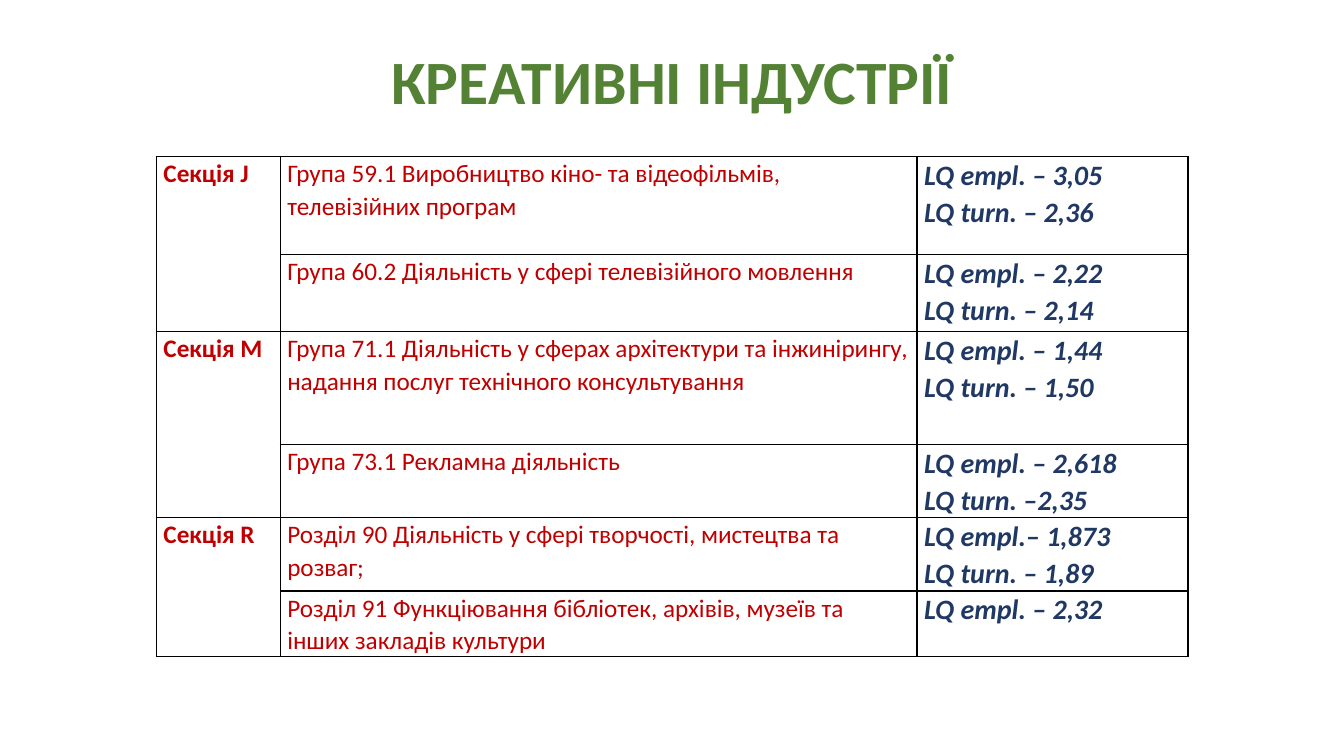
from lxml.etree import SubElement as Sub
from pptx import Presentation
from pptx.dml.color import RGBColor as Rgb
from pptx.enum.text import MSO_ANCHOR as Anchor, PP_ALIGN as Align
from pptx.oxml.ns import qn
from pptx.util import Cm, Pt

COLORS = {"title": "548235", "name": "C00000", "value": "203864", "line": "000000"}
WIDTHS = [3.12, 16.05, 6.83]
HEIGHTS = [2.48, 1.93, 2.85, 1.84, 1.85, 1.66]
SECTIONS = [
    ("Секція J", [
        ("Група 59.1 Виробництво кіно- та відеофільмів, телевізійних програм",
         ["LQ empl. – 3,05", "LQ turn. – 2,36"]),
        ("Група 60.2 Діяльність у сфері телевізійного мовлення",
         ["LQ empl. – 2,22", "LQ turn. – 2,14"]),
    ]),
    ("Cекція М", [
        ("Група 71.1 Діяльність у сферах архітектури та інжинірингу, "
         "надання послуг технічного консультування",
         ["LQ empl. – 1,44", "LQ turn. – 1,50"]),
        ("Група 73.1 Рекламна діяльність",
         ["LQ empl. – 2,618", "LQ turn. –2,35"]),
    ]),
    ("Секція R", [
        ("Розділ 90 Діяльність у сфері творчості, мистецтва та розваг;",
         ["LQ empl.– 1,873", "LQ turn. – 1,89"]),
        ("Розділ 91 Функціювання бібліотек, архівів, музеїв та інших закладів культури",
         ["LQ empl. – 2,32"]),
    ]),
]


def write(frame, lines, color, size=18, bold=False, italic=False,
          align=Align.LEFT, spacing=1.07):
    """Fill a text frame with one paragraph per line."""
    frame.word_wrap = True
    for i, line in enumerate(lines):
        para = frame.add_paragraph() if i else frame.paragraphs[0]
        para.alignment = align
        para.line_spacing = spacing
        run = para.add_run()
        run.text = line
        font = run.font
        font.name, font.size = "Calibri", Pt(size)
        font.bold, font.italic = bold, italic
        font.color.rgb = Rgb.from_string(COLORS[color])


def add_title(slide, text):
    box = slide.shapes.add_textbox(Cm(2.34), Cm(1.02), Cm(29.21), Cm(2.24))
    box.text_frame.vertical_anchor = Anchor.MIDDLE
    write(box.text_frame, [text], "title", size=44, bold=True,
          align=Align.CENTER, spacing=0.9)


def style(cell):
    """Give a cell its margins and border, and no fill."""
    cell.margin_left = cell.margin_right = Cm(0.18)
    cell.margin_top = cell.margin_bottom = 0
    props = cell._tc.get_or_add_tcPr()
    for side in ("lnL", "lnR", "lnT", "lnB"):
        line = Sub(props, qn("a:" + side), w=str(Pt(1)))
        fill = Sub(line, qn("a:solidFill"))
        Sub(fill, qn("a:srgbClr"), val=COLORS["line"])
    cell.fill.background()


def add_grid(slide):
    frame = slide.shapes.add_table(len(HEIGHTS), len(WIDTHS), Cm(3.94), Cm(3.94),
                                   Cm(sum(WIDTHS)), Cm(sum(HEIGHTS)))
    table = frame.table
    table.first_row = table.horz_banding = False
    for col, width in zip(table.columns, WIDTHS):
        col.width = Cm(width)
    for row, height in zip(table.rows, HEIGHTS):
        row.height = Cm(height)
    for cell in table.iter_cells():
        style(cell)
    top = 0
    for section, groups in SECTIONS:
        head = table.cell(top, 0)
        head.merge(table.cell(top + len(groups) - 1, 0))
        write(head.text_frame, [section], "name", bold=True)
        for row, (name, values) in enumerate(groups, top):
            write(table.cell(row, 1).text_frame, [name], "name")
            write(table.cell(row, 2).text_frame, values, "value",
                  size=20, bold=True, italic=True)
        top += len(groups)


def main():
    deck = Presentation()
    deck.slide_width, deck.slide_height = Cm(33.87), Cm(19.05)
    slide = deck.slides.add_slide(deck.slide_layouts[6])
    add_title(slide, "КРЕАТИВНІ ІНДУСТРІЇ")
    add_grid(slide)
    deck.save("out.pptx")


if __name__ == "__main__":
    main()
